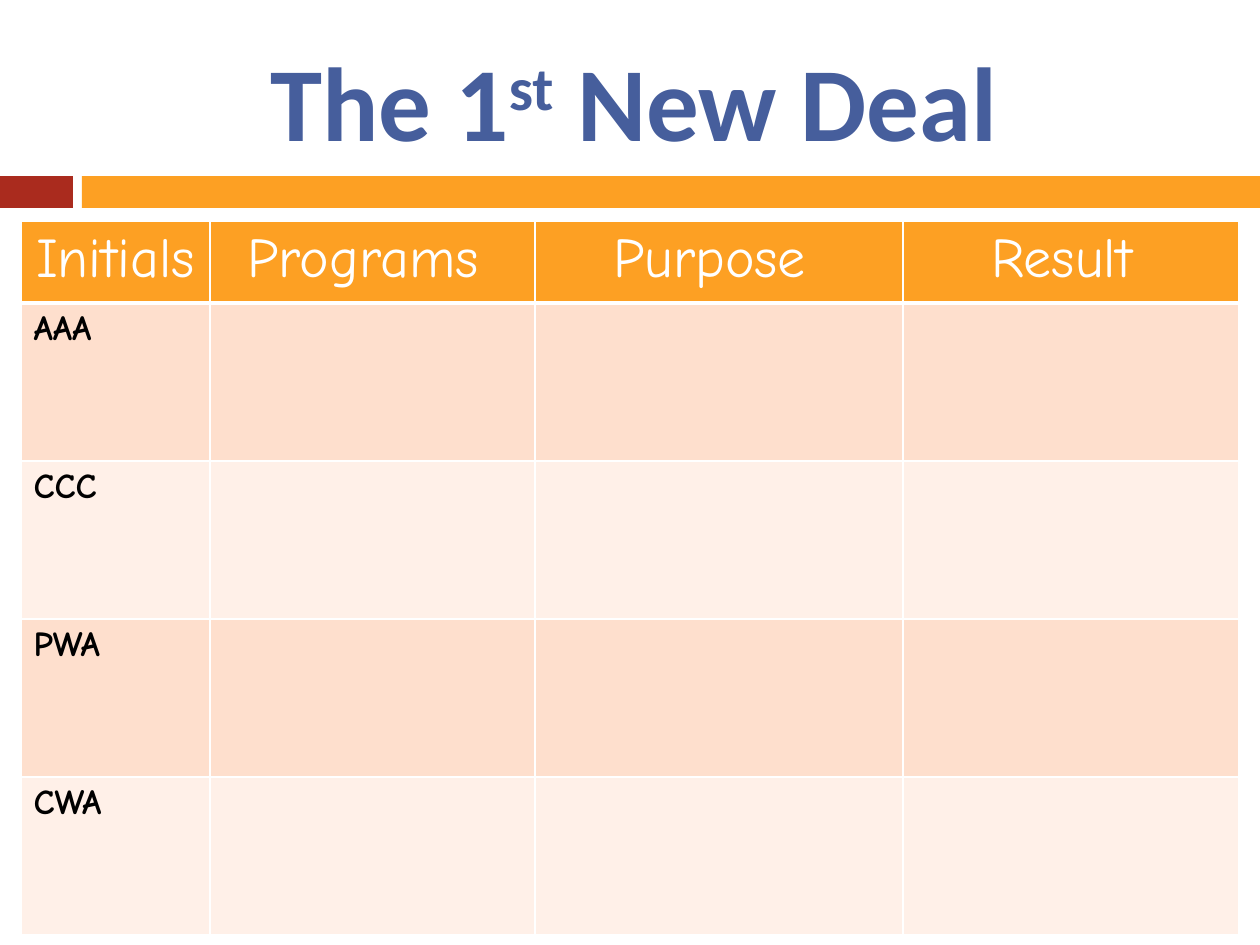
from lxml.etree import SubElement
from pptx import Presentation
from pptx.dml.color import RGBColor
from pptx.enum.shapes import MSO_SHAPE as Shape
from pptx.enum.text import MSO_ANCHOR as Anchor, PP_ALIGN as Align
from pptx.oxml.ns import qn
from pptx.util import Emu, Pt

SCALE = 914400 / 126  # EMU in one px
WHITE, BLACK, BLUE = "FFFFFF", "000000", "465E9C"
RED, ORANGE = "AA2B1E", "FDA023"
BANDS = ["FEDFCD", "FFF0E8"]


def px(n):
    return Emu(round(n * SCALE))


def rgb(code):
    return RGBColor.from_string(code)


def write(para, text, font="Comic Neue", size=20, color=BLACK,
          bold=False, align=None, lift=0):
    """Add one run; lift is the superscript shift in percent."""
    run = para.add_run()
    run.text = text
    face = run.font
    face.name, face.size, face.bold = font, Pt(size), bold
    face.color.rgb = rgb(color)
    if align is not None:
        para.alignment = align
    if lift:
        run._r.get_or_add_rPr().set("baseline", str(lift * 1000))


class Deck:
    def __init__(self, wide, high):
        self.prs = Presentation()
        self.prs.slide_width, self.prs.slide_height = px(wide), px(high)
        self.slide = self.prs.slides.add_slide(self.prs.slide_layouts[6])

    def bar(self, x, y, w, h, color):
        box = self.slide.shapes.add_shape(
            Shape.RECTANGLE, px(x), px(y), px(w), px(h))
        box.shadow.inherit = False
        box.fill.solid()
        box.fill.fore_color.rgb = rgb(color)
        box.line.fill.background()

    def title(self, x, y, w, h, parts):
        box = self.slide.shapes.add_textbox(px(x), px(y), px(w), px(h))
        frame = box.text_frame
        frame.word_wrap = True
        frame.vertical_anchor = Anchor.MIDDLE
        for text, lift in parts:
            write(frame.paragraphs[0], text, font="Calibri", size=60,
                  color=BLUE, bold=True, align=Align.CENTER, lift=lift)

    def edge(self, cell, **widths):
        props = cell._tc.get_or_add_tcPr()
        for side in "LRTB":
            line = SubElement(props, qn(f"a:ln{side}"),
                              w=str(Pt(widths.get(side, 1))))
            fill = SubElement(line, qn("a:solidFill"))
            SubElement(fill, qn("a:srgbClr"), val=WHITE)

    def table(self, x, y, cols, rows):
        grid = self.slide.shapes.add_table(
            len(rows), len(cols), px(x), px(y),
            px(sum(cols)), px(sum(rows))).table
        for col, w in zip(grid.columns, cols):
            col.width = px(w)
        for row, h in zip(grid.rows, rows):
            row.height = px(h)
        # Borders first, then fills, as the file format orders them
        for r in range(len(rows)):
            for c in range(len(cols)):
                cell = grid.cell(r, c)
                self.edge(cell, B=1 if r else 3, T=3 if r == 1 else 1)
                cell.fill.solid()
                cell.fill.fore_color.rgb = rgb(
                    BANDS[(r - 1) % 2] if r else ORANGE)
        return grid


def main():
    deck = Deck(1260, 945)

    # Band under the title
    deck.bar(0, 176, 73, 32, RED)
    deck.bar(82, 176, 1178, 32, ORANGE)

    deck.title(84, 32, 1124, 136,
               [("The 1", 0), ("st", 30), (" New Deal ", 0)])

    # Program table
    grid = deck.table(21, 221, [189, 325, 368, 336], [82] + [158] * 4)
    heads = ["Initials ", "Programs ", "Purpose ", "Result "]
    for c, text in enumerate(heads):
        write(grid.cell(0, c).text_frame.paragraphs[0], text,
              size=32, color=WHITE, align=Align.CENTER)
    for r, text in enumerate(["AAA", "CCC", "PWA", "CWA"], 1):
        write(grid.cell(r, 0).text_frame.paragraphs[0], text, bold=True)

    deck.prs.save("out.pptx")


if __name__ == "__main__":
    main()
